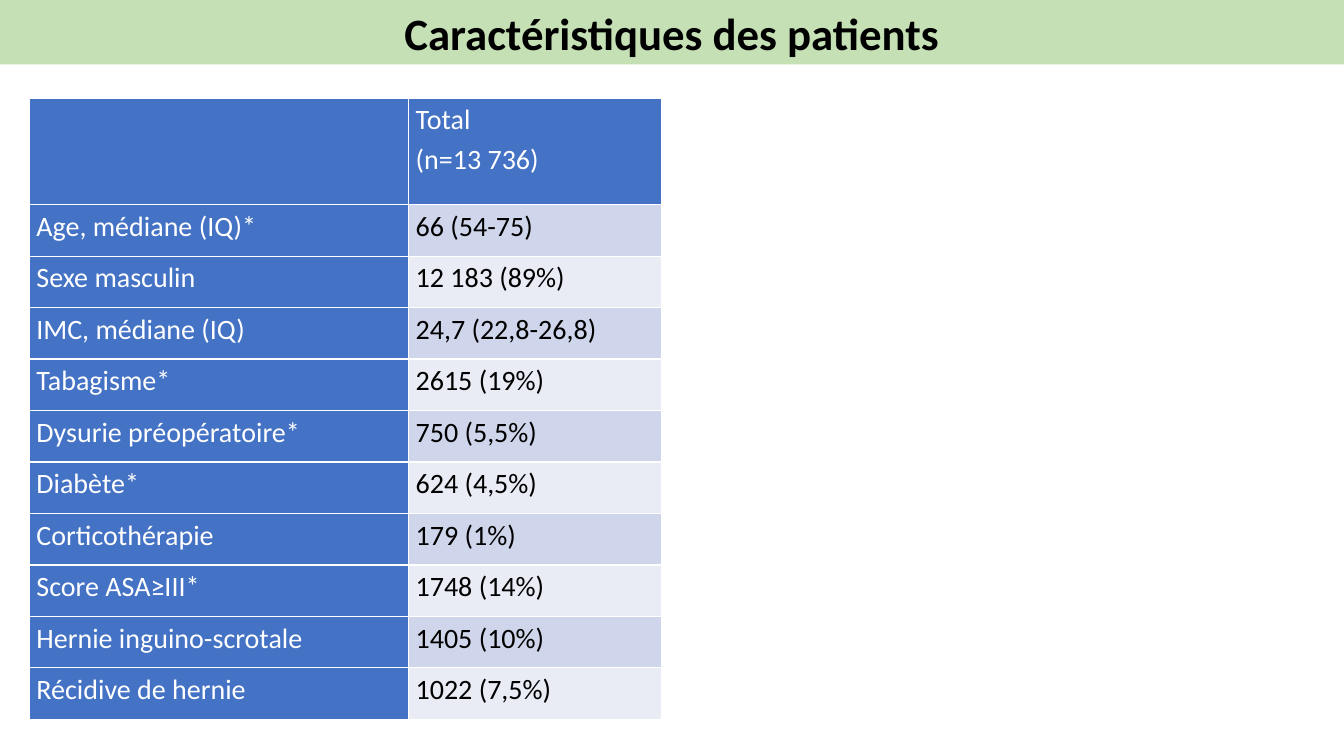
import pptx
import pptx.dml.color
import pptx.enum.text
import pptx.oxml
import pptx.oxml.ns
import pptx.util

Pt = pptx.util.Pt

COLORS = {
    "band": "C5E0B4",
    "head": "4472C4",
    "odd": "CFD5EA",
    "even": "E9EBF5",
    "white": "FFFFFF",
    "black": "000000",
}
ROWS = [
    ("", "Total\n(n=13 736)"),
    ("Age, médiane (IQ)*", "66 (54-75)"),
    ("Sexe masculin", "12 183 (89%)"),
    ("IMC, médiane (IQ)", "24,7 (22,8-26,8)"),
    ("Tabagisme*", "2615 (19%)"),
    ("Dysurie préopératoire*", "750 (5,5%)"),
    ("Diabète*", "624 (4,5%)"),
    ("Corticothérapie", "179 (1%)"),
    ("Score ASA≥III*", "1748 (14%)"),
    ("Hernie inguino-scrotale", "1405 (10%)"),
    ("Récidive de hernie", "1022 (7,5%)"),
]
CELL = {"margin_left": Pt(5), "margin_right": Pt(5),
        "margin_top": 0, "margin_bottom": 0}
HEAD_HIGH = 76.2
SHARE = 0.6


def rgb(name):
    return pptx.dml.color.RGBColor.from_string(COLORS[name])


def paint(obj, name):
    obj.fill.solid()
    obj.fill.fore_color.rgb = rgb(name)


def style(font, size, name, bold=False):
    looks = {"name": "Calibri", "size": Pt(size), "bold": bold}
    for key, val in looks.items():
        setattr(font, key, val)
    font.color.rgb = rgb(name)


def edge(cell):
    """Draw a thin white line on all four sides of a cell."""
    props = cell._tc.get_or_add_tcPr()
    for side in "LRTB":
        props.append(pptx.oxml.parse_xml(
            f'<a:ln{side} {pptx.oxml.ns.nsdecls("a")} w="{Pt(1)}">'
            f'<a:solidFill><a:srgbClr val="{COLORS["white"]}"/></a:solidFill>'
            f'</a:ln{side}>'))


def add_title(slide, text, left, top, width, height):
    band = slide.shapes.add_shape(
        pptx.enum.shapes.MSO_SHAPE.RECTANGLE,
        Pt(left), Pt(top), Pt(width), Pt(height))
    band.shadow.inherit = False
    band.line.fill.background()
    paint(band, "band")
    frame = band.text_frame
    frame.word_wrap = True
    frame.vertical_anchor = pptx.enum.text.MSO_ANCHOR.MIDDLE
    para = frame.paragraphs[0]
    para.alignment = pptx.enum.text.PP_ALIGN.CENTER
    para.text = text
    style(para.runs[0].font, 32, "black", True)


def fill_cell(cell, text, fill, ink):
    for key, val in CELL.items():
        setattr(cell, key, val)
    edge(cell)
    paint(cell, fill)
    cell.text = text
    for para in cell.text_frame.paragraphs:
        para.line_spacing = 1.15
        style(para.font, 20, ink)
        for run in para.runs:
            style(run.font, 20, ink)


def add_grid(slide, rows, left, top, width, height):
    """Place the patient table, with a tall head row and equal rows below."""
    grid = slide.shapes.add_table(
        len(rows), 2, Pt(left), Pt(top), Pt(width), Pt(height)).table
    for col, part in zip(grid.columns, (SHARE, 1 - SHARE)):
        col.width = Pt(width * part)
    step = (height - HEAD_HIGH) / (len(rows) - 1)
    for i, texts in enumerate(rows):
        grid.rows[i].height = Pt(step if i else HEAD_HIGH)
        for j, text in enumerate(texts):
            if i and j:
                fill, ink = ("odd" if i % 2 else "even"), "black"
            else:
                fill, ink = "head", "white"
            fill_cell(grid.cell(i, j), text, fill, ink)


def main():
    deck = pptx.Presentation()
    deck.slide_width, deck.slide_height = Pt(960), Pt(540)
    slide = deck.slides.add_slide(deck.slide_layouts[6])
    add_title(slide, "Caractéristiques des patients", 0, 0, 960, 46)
    add_grid(slide, ROWS, 21, 70, 451.6, 444)
    deck.save("out.pptx")


if __name__ == "__main__":
    main()
